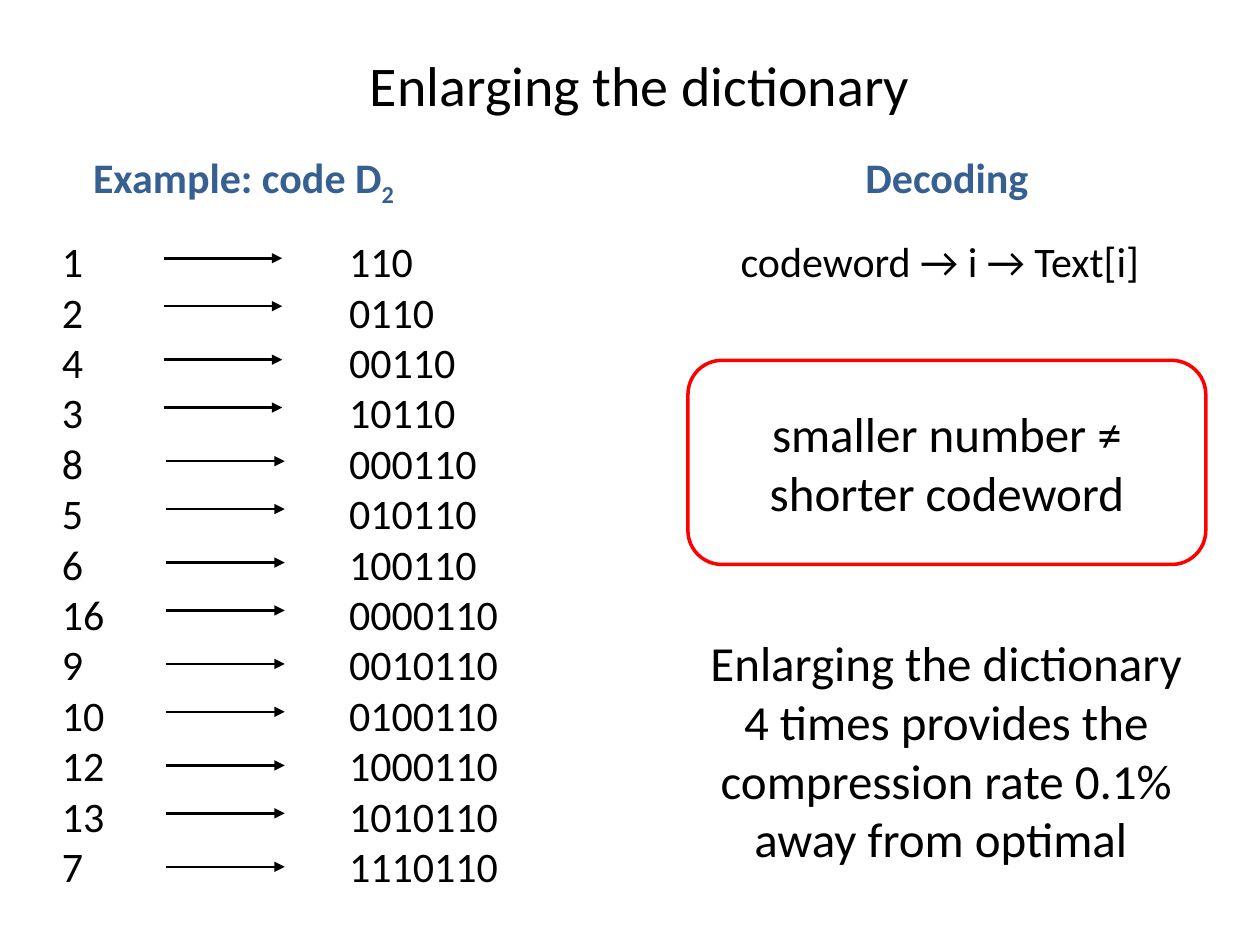
"""Build the slide on enlarging the dictionary."""
from lxml import etree
from pptx import Presentation
from pptx import util as u
from pptx.dml import color
from pptx.enum import shapes, text
from pptx.oxml import ns

CODES = [
    ("1", "110"), ("2", "0110"), ("4", "00110"), ("3", "10110"),
    ("8", "000110"), ("5", "010110"), ("6", "100110"),
    ("16", "0000110"), ("9", "0010110"), ("10", "0100110"),
    ("12", "1000110"), ("13", "1010110"), ("7", "1110110"),
]
BLACK, BLUE, RED = "000000", "376092", "FF0000"
LEFT, CENTER = text.PP_ALIGN.LEFT, text.PP_ALIGN.CENTER


def rgb(code):
    return color.RGBColor.from_string(code)


def sub(node, tag, **attrs):
    return etree.SubElement(node, ns.qn(tag), attrs)


class Deck:
    def __init__(self, font="Calibri"):
        self.font = font
        self.prs = Presentation()
        self.prs.slide_width = u.Inches(10)
        self.prs.slide_height = u.Inches(7.5)
        self.slide = self.prs.slides.add_slide(self.prs.slide_layouts[3])

    def place(self, shape, box):
        shape.left, shape.top, shape.width, shape.height = map(u.Inches, box)

    def style(self, frame, size, hue=BLACK, bold=False, align=LEFT,
              anchor=text.MSO_ANCHOR.TOP):
        frame.word_wrap = True
        frame.auto_size = text.MSO_AUTO_SIZE.NONE
        frame.vertical_anchor = anchor
        for para in frame.paragraphs:
            para.alignment = align
            para.space_before = u.Pt(0)
            for run in para.runs:
                run.font.name = self.font
                run.font.size = u.Pt(size)
                run.font.bold = bold
                run.font.color.rgb = rgb(hue)

    def title(self, words, box):
        shape = self.slide.shapes.title
        self.place(shape, box)
        frame = shape.text_frame
        frame.text = words
        self.style(frame, 32, align=CENTER, anchor=text.MSO_ANCHOR.MIDDLE)
        props = frame.paragraphs[0].runs[0].font._element
        glow = etree.Element(ns.qn("a:effectLst"))
        shade = sub(glow, "a:outerShdw", blurRad="38100", dist="38100",
                    dir="2700000", algn="tl")
        sub(sub(shade, "a:srgbClr", val=BLACK), "a:alpha", val="43000")
        props.find(ns.qn("a:solidFill")).addnext(glow)

    def list(self, index, items, box):
        shape = self.slide.placeholders[index]
        self.place(shape, box)
        frame = shape.text_frame
        frame.text = "\n".join(items)
        self.style(frame, 24)
        for para in frame.paragraphs:
            props = para._p.get_or_add_pPr()
            props.set("marL", "0")
            props.set("indent", "0")
            sub(props, "a:buNone")

    def label(self, words, box, size=24, **look):
        frame = self.slide.shapes.add_textbox(*map(u.Inches, box)).text_frame
        frame.text = words
        self.style(frame, size, **look)
        return frame

    def head(self, words, box, low=""):
        frame = self.label(words, box, hue=BLUE, bold=True)
        if low:
            run = frame.paragraphs[0].add_run()
            run.text = low
            self.style(frame, 24, BLUE, True)
            run.font._element.set("baseline", "-25000")

    def panel(self, words, box):
        shape = self.slide.shapes.add_shape(
            shapes.MSO_SHAPE.ROUNDED_RECTANGLE, *map(u.Inches, box))
        shape.shadow.inherit = False
        shape.fill.background()
        shape.line.color.rgb = rgb(RED)
        shape.line.width = u.Pt(2)
        frame = shape.text_frame
        frame.paragraphs[0].text = words
        self.style(frame, 28, align=CENTER, anchor=text.MSO_ANCHOR.MIDDLE)

    def arrow(self, x, y, width):
        line = self.slide.shapes.add_connector(
            shapes.MSO_CONNECTOR.STRAIGHT,
            *map(u.Inches, (x, y, x + width, y)))
        line.line.color.rgb = rgb(BLACK)
        line.line.width = u.Pt(1.5)
        sub(line.line._get_or_add_ln(), "a:tailEnd", type="triangle")
        sub(line._element.spPr, "a:effectLst")


def main():
    deck = Deck()
    deck.title("Enlarging the dictionary", (0.39, 0.23, 9.38, 0.87))
    keys, words = zip(*CODES)
    deck.list(1, keys, (0.39, 1.82, 1.58, 5.35))
    deck.list(2, words, (2.67, 1.82, 1.58, 5.35))
    pitch = (6.88 - 2.05) / 6
    for i in range(len(CODES)):
        pair, odd = divmod(i, 2)
        deck.arrow(1.3 if i < 4 else 1.32, 2.05 + pair * pitch + odd * 0.38,
                   0.94)
    deck.head("Example: code D", (0.64, 1.15, 2.86, 0.5), low="2")
    deck.head("Decoding", (6.77, 1.15, 1.49, 0.5))
    deck.label("codeword → i → Text[i]", (5.78, 1.82, 3.46, 0.5))
    deck.panel("smaller number ≠\nshorter codeword", (5.46, 2.86, 4.11, 1.62))
    deck.label("Enlarging the dictionary 4 times provides the compression "
               "rate 0.1% away from optimal ", (5.43, 4.97, 4.16, 1.99),
               size=28, align=CENTER)
    deck.prs.save("out.pptx")


if __name__ == "__main__":
    main()
